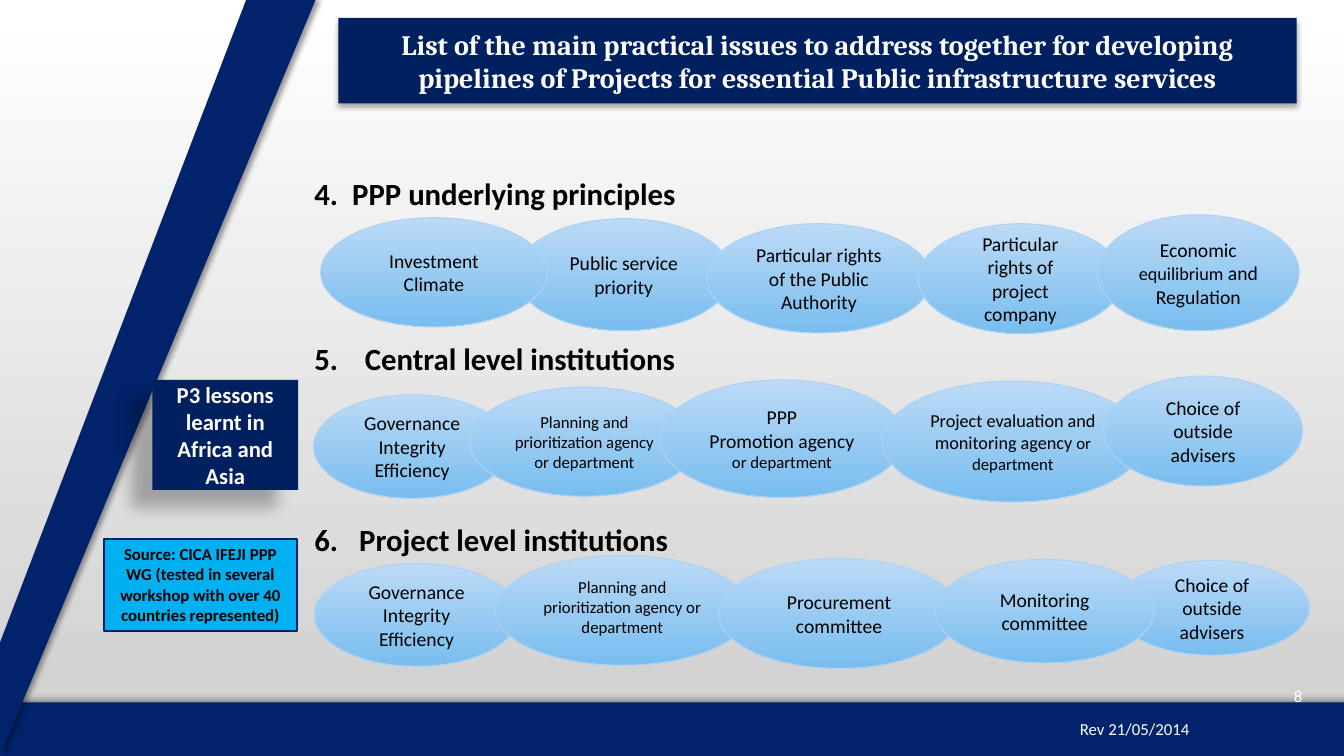
from lxml import etree
from pptx import Presentation
from pptx.dml.color import RGBColor
from pptx.enum.shapes import MSO_SHAPE
from pptx.enum.text import MSO_ANCHOR, MSO_AUTO_SIZE, PP_ALIGN
from pptx.oxml.ns import qn
from pptx.util import Pt

RECT, OVAL = MSO_SHAPE.RECTANGLE, MSO_SHAPE.OVAL
TOP, MIDDLE = MSO_ANCHOR.TOP, MSO_ANCHOR.MIDDLE
LEFT, CENTER, RIGHT = PP_ALIGN.LEFT, PP_ALIGN.CENTER, PP_ALIGN.RIGHT
FIXED = MSO_AUTO_SIZE.NONE

COLORS = {
    "white": "FFFFFF", "black": "000000", "gray": "CECECE",
    "band": "01236B", "navy": "002060", "cyan": "00B0F0",
    "pale": "BCDAF6", "blue": "78BDEF", "edge": "AED2F4",
}

# Topics: number, name, hanging indent, space before
TOPICS = [
    ("4.", "PPP underlying principles", 27, 0),
    ("5.", "Central level institutions", 36, 91.6),
    ("6.", "Project level institutions", 32, 103.1),
]

# Ovals, back to front: x, y, width, height, paragraphs of (text, size), anchor
GOVERN = [[("Governance Integrity", 14)], [("Efficiency", 14)]]
PLAN = [[("Planning and prioritization agency or department", 12)]]
CHOICE = [[("Choice of outside advisers", 14)]]
ROWS = [
    ((224, 153), [
        (144.6, 3.2, 154, 80, [[("Public service priority", 14)]], MIDDLE),
        (5, 2.5, 162, 78, [[("Investment Climate", 14)]], MIDDLE),
        (280.7, 6.8, 160.6, 78,
         [[("Particular rights of the Public Authority", 14)]], MIDDLE),
        (431.9, 6.8, 146, 78.5,
         [[("Particular rights of project company", 14)]], MIDDLE),
        (560, 0.4, 144, 82.8, [[("Economic ", 14), ("equilibrium", 13),
                                (" and Regulation", 14)]], MIDDLE),
    ]),
    ((224, 268), [
        (0, 14, 141, 74, GOVERN, MIDDLE),
        (111.5, 8.5, 164, 78, PLAN, MIDDLE),
        (247.6, 3.4, 174, 84, [[("PPP", 14)], [("Promotion agency", 14),
                                               (" or department", 12)]], MIDDLE),
        (406, 4.2, 187, 86.4, [[("Project evaluation and monitoring agency ", 13),
                                ("or department", 12)]], MIDDLE),
        (564.4, 0.6, 142, 78.5, CHOICE, MIDDLE),
    ]),
    ((224, 396), [
        (0.6, 6.5, 146, 73.5, GOVERN, MIDDLE),
        (129.5, 0.7, 182, 78.5, PLAN, TOP),
        (289.4, 3, 172, 78.5, [[("Procurement", 14)], [("committee", 14)]], MIDDLE),
        (572.3, 4.3, 139, 67.7, CHOICE, MIDDLE),
        (444.2, 3.6, 156, 74, [[("Monitoring", 14)], [("committee", 14)]], MIDDLE),
    ]),
]


def rgb(name):
    return RGBColor.from_string(COLORS[name])


def add_run(para, text, size, color="black", bold=False, face="Calibri"):
    run = para.add_run()
    run.text = text
    font = run.font
    font.size, font.bold, font.name = Pt(size), bold, face
    font.color.rgb = rgb(color)


def write(shape, paras, anchor=MIDDLE, align=CENTER, **style):
    frame = shape.text_frame
    frame.word_wrap, frame.auto_size = True, FIXED
    frame.vertical_anchor = anchor
    for i, runs in enumerate(paras):
        para = frame.add_paragraph() if i else frame.paragraphs[0]
        para.alignment = align
        for text, size in runs:
            add_run(para, text, size, **style)


def cast(shape, alpha, blur, dist, angle):
    shape.shadow.inherit = False
    effects = shape._element.spPr.find(qn("a:effectLst"))
    outer = etree.SubElement(effects, qn("a:outerShdw"), blurRad=str(Pt(blur)),
                             dist=str(Pt(dist)), dir=str(angle * 60000),
                             algn="ctr", rotWithShape="0")
    tint = etree.SubElement(outer, qn("a:srgbClr"), val=COLORS["black"])
    etree.SubElement(tint, qn("a:alpha"), val=str(alpha * 1000))


def blend(fill, first, last):
    fill.gradient()
    fill.gradient_angle = 270
    for stop, name in zip(fill.gradient_stops, (first, last)):
        stop.color.rgb = rgb(name)


def place(shape, box):
    shape.left, shape.top, shape.width, shape.height = map(Pt, box)


def add_box(slide, kind, box):
    shape = slide.shapes.add_shape(kind, *map(Pt, box))
    shape.shadow.inherit = False
    return shape


def paint(shape, color):
    shape.fill.solid()
    shape.fill.fore_color.rgb = rgb(color)
    shape.line.fill.background()


def add_band(slide, box, points, angle):
    x, y, w, h = box
    spots = [(Pt(x + w * u), Pt(y + h * v)) for u, v in points]
    build = slide.shapes.build_freeform(*spots[0])
    build.add_line_segments(spots[1:])
    band = build.convert_to_shape()
    paint(band, "band")
    cast(band, 40, 4, 3, angle)


def add_head(slide, box):
    head = add_box(slide, RECT, box)
    paint(head, "navy")
    cast(head, 32, 3.5, 2.2, 90)
    write(head, [[("List of the main practical issues to address together for "
                   "developing pipelines of Projects for essential Public "
                   "infrastructure services", 20)]],
          color="white", bold=True, face="Cambria")


def add_topics(slide, box):
    body = slide.placeholders[1]
    place(body, box)
    frame = body.text_frame
    frame.auto_size, frame.vertical_anchor = FIXED, TOP
    frame.margin_top = 0
    for i, (number, name, indent, space) in enumerate(TOPICS):
        para = frame.add_paragraph() if i else frame.paragraphs[0]
        props = para._p.get_or_add_pPr()
        props.set("marL", str(Pt(indent)))
        props.set("indent", str(-Pt(indent)))
        etree.SubElement(props, qn("a:buNone"))
        para.alignment = LEFT
        para.space_before, para.space_after = Pt(space), Pt(0)
        add_run(para, f"{number}\t{name}", 22, bold=True)


def add_row(slide, origin, ovals):
    left, top = origin
    for x, y, w, h, paras, anchor in ovals:
        oval = add_box(slide, OVAL, (left + x, top + y, w, h))
        blend(oval.fill, "pale", "blue")
        oval.line.color.rgb, oval.line.width = rgb("edge"), Pt(0.75)
        write(oval, paras, anchor)


def add_title(slide, box):
    title = slide.shapes.title
    place(title, box)
    paint(title, "navy")
    cast(title, 28, 11.8, 19.7, 141)
    write(title, [[("P3 lessons learnt in Africa and Asia", 16.2)]],
          color="white", bold=True)
    slide.shapes._spTree.append(title._element)  # in front of the bands


def add_source(slide, box):
    note = add_box(slide, RECT, box)
    paint(note, "cyan")
    note.line.color.rgb, note.line.width = rgb("navy"), Pt(1.5)
    write(note, [[("Source: CICA IFEJI PPP WG (tested in several workshop with "
                   "over 40 countries represented)", 12)]], TOP, bold=True)


def add_label(slide, box, text):
    label = slide.shapes.add_textbox(*map(Pt, box))
    write(label, [[(text, 12)]], align=RIGHT, color="white")


def main():
    deck = Presentation()
    deck.slide_width, deck.slide_height = Pt(960), Pt(540)
    slide = deck.slides.add_slide(deck.slide_layouts[1])
    blend(slide.background.fill, "white", "gray")

    # Bands at the foot and along the left
    add_band(slide, (0, 501.8, 960, 38.2), [(0.01, 0), (1, 0), (1, 1), (0, 1)], 315)
    add_band(slide, (0, 0, 225.4, 540), [(1, 0), (0.78, 0), (0, 0.85), (0, 1)], 0)

    # Topics and their ovals
    add_topics(slide, (217.4, 124.5, 742, 320))
    for origin, ovals in ROWS:
        add_row(slide, origin, ovals)

    # Boxes and footer
    add_title(slide, (108.9, 271.4, 104, 78.6))
    add_head(slide, (241.8, 12.8, 684.5, 61))
    add_source(slide, (74, 385, 138.4, 65.6))
    add_label(slide, (894.2, 482.4, 43.2, 28.8), "8")
    add_label(slide, (738.7, 506.2, 118, 28.8), "Rev 21/05/2014")
    deck.save("out.pptx")


if __name__ == "__main__":
    main()
